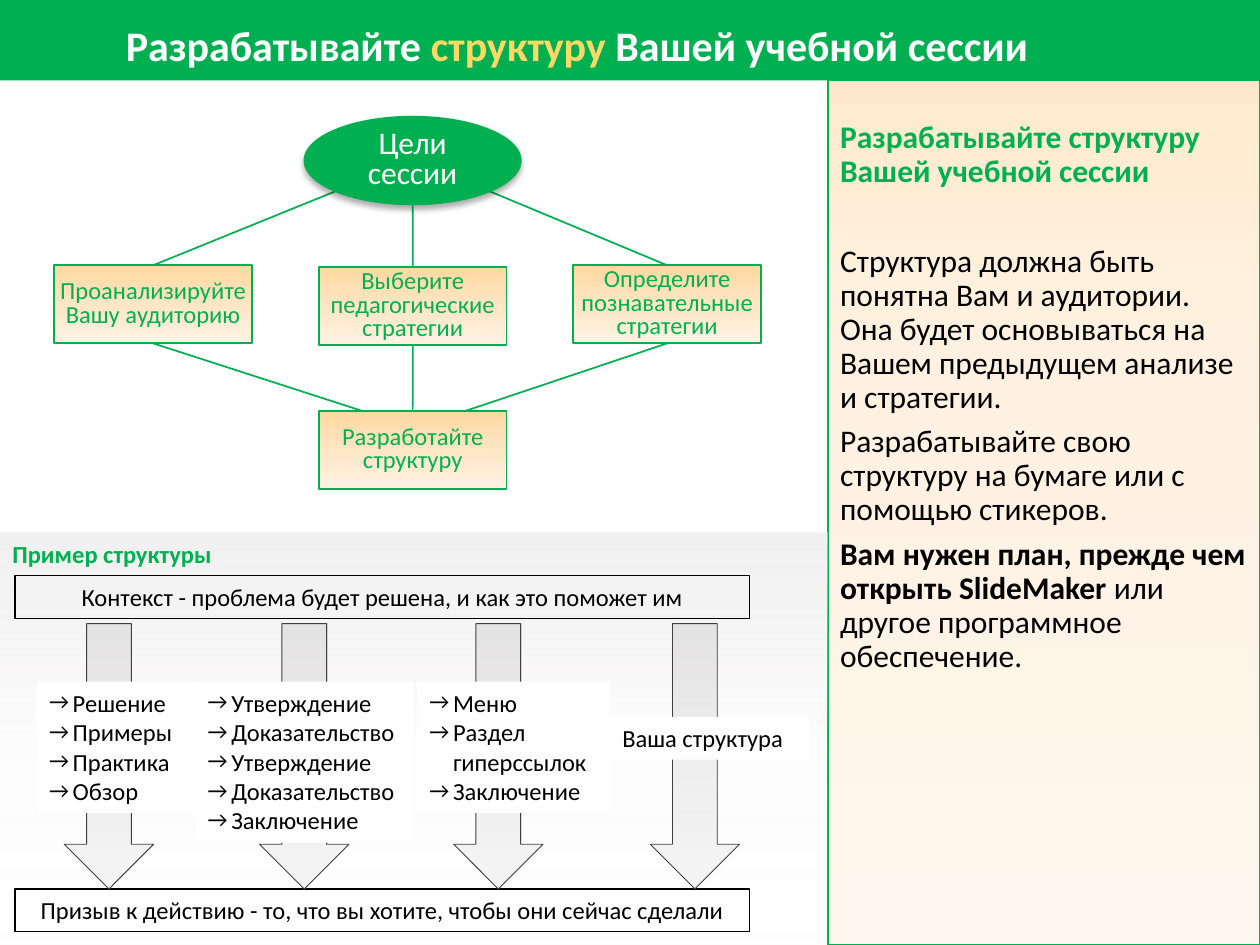
"""Build a slide on structuring a training session."""
from dataclasses import dataclass
from typing import Optional

from lxml import etree
from pptx import Presentation
from pptx.dml.color import RGBColor
from pptx.enum.shapes import MSO_CONNECTOR, MSO_SHAPE
from pptx.enum.text import MSO_ANCHOR, PP_ALIGN
from pptx.oxml.ns import qn
from pptx.util import Pt

RECT, OVAL, DOWN = MSO_SHAPE.RECTANGLE, MSO_SHAPE.OVAL, MSO_SHAPE.DOWN_ARROW
STRAIGHT = MSO_CONNECTOR.STRAIGHT
TOP, MIDDLE, BOTTOM = MSO_ANCHOR.TOP, MSO_ANCHOR.MIDDLE, MSO_ANCHOR.BOTTOM
LEFT, CENTER = PP_ALIGN.LEFT, PP_ALIGN.CENTER


@dataclass(frozen=True)
class Theme:
    """Colours, gradients and type sizes of the slide."""
    font: str = "Calibri"
    green: str = "00B050"
    gold: str = "FFD966"
    white: str = "FFFFFF"
    black: str = "000000"
    dark: str = "404040"
    title: float = 24
    body: float = 18
    small: float = 14
    peach: tuple = ((0, "FFD8A0", 100), (50, "FFE6C5", 100), (100, "FFF2E3", 100))
    sidebar: tuple = ((0, "FFD8A0", 55), (24, "FFE6C5", 55), (100, "FFF2E3", 55))
    panel: tuple = ((0, "E7E6E6", 60), (50, "E7E6E6", 10), (100, "E7E6E6", 2))
    arrow: tuple = ((0, "D0CECE", 46), (100, "D0CECE", 18))


T = Theme()


@dataclass(frozen=True)
class Box:
    """A rectangle in points."""
    x: float
    y: float
    w: float
    h: float


@dataclass(frozen=True)
class Run:
    """A stretch of text with one format."""
    text: str
    color: str = T.black
    size: float = T.small
    bold: bool = False


@dataclass(frozen=True)
class Para:
    """A paragraph of runs."""
    runs: tuple
    align: PP_ALIGN = LEFT
    spacing: Optional[float] = None
    before: float = 0
    bullet: bool = False


@dataclass(frozen=True)
class Step:
    """A green-framed box of the diagram."""
    box: Box
    text: str


@dataclass(frozen=True)
class Example:
    """A down arrow with a list laid over it."""
    arrow_x: float
    box: Box
    items: tuple
    bullet: bool = True


def add_gradient(s, stops: tuple) -> None:
    """Fill a shape from top to bottom with gradient stops."""
    s.fill.gradient()
    s.fill.gradient_angle = 270
    stop_list = s._element.spPr.find(".//" + qn("a:gsLst"))
    for old in list(stop_list):
        stop_list.remove(old)
    for pos, color, alpha in stops:
        gs = etree.SubElement(stop_list, qn("a:gs"), pos=str(pos * 1000))
        clr = etree.SubElement(gs, qn("a:srgbClr"), val=color)
        etree.SubElement(clr, qn("a:alpha"), val=str(alpha * 1000))


def add_shape(slide, kind, box: Box, fill=None, line: Optional[str] = None, width: float = 1):
    """Add a preset shape with a solid, gradient or empty fill."""
    s = slide.shapes.add_shape(kind, Pt(box.x), Pt(box.y), Pt(box.w), Pt(box.h))
    s.shadow.inherit = False
    if fill is None:
        s.fill.background()
    elif isinstance(fill, str):
        s.fill.solid()
        s.fill.fore_color.rgb = RGBColor.from_string(fill)
    else:
        add_gradient(s, fill)
    if line:
        s.line.color.rgb = RGBColor.from_string(line)
        s.line.width = Pt(width)
    else:
        s.line.fill.background()
    return s


def add_shadow(s) -> None:
    """Give a shape a soft shadow below it."""
    effects = s._element.spPr.find(qn("a:effectLst"))
    shadow = etree.SubElement(effects, qn("a:outerShdw"), blurRad=str(Pt(3.5)),
                              dist=str(Pt(2.2)), dir="5400000", rotWithShape="0")
    clr = etree.SubElement(shadow, qn("a:srgbClr"), val=T.black)
    etree.SubElement(clr, qn("a:alpha"), val="32000")


def add_bullet(p) -> None:
    """Hang a paragraph on an arrow bullet."""
    pPr = p._p.get_or_add_pPr()
    pPr.set("marL", str(Pt(13.5)))
    pPr.set("indent", str(-Pt(13.5)))
    etree.SubElement(pPr, qn("a:buSzPct"), val="90000")
    etree.SubElement(pPr, qn("a:buFont"), typeface=T.font)
    etree.SubElement(pPr, qn("a:buChar"), char="→")


def write(s, paras: list, anchor: MSO_ANCHOR = TOP, side: float = 7.2) -> None:
    """Write paragraphs into a shape run by run."""
    tf = s.text_frame
    tf.word_wrap = True
    tf.vertical_anchor = anchor
    tf.margin_left = tf.margin_right = Pt(side)
    for i, para in enumerate(paras):
        p = tf.add_paragraph() if i else tf.paragraphs[0]
        p.alignment = para.align
        p.space_before = Pt(para.before)
        if para.spacing:
            p.line_spacing = para.spacing
        if para.bullet:
            add_bullet(p)
        for run in para.runs:
            r = p.add_run()
            r.text = run.text
            r.font.name, r.font.size, r.font.bold = T.font, Pt(run.size), run.bold
            r.font.color.rgb = RGBColor.from_string(run.color)


def add_text(slide, box: Box, paras: list, anchor: MSO_ANCHOR = TOP) -> None:
    """Add a text box."""
    s = slide.shapes.add_textbox(Pt(box.x), Pt(box.y), Pt(box.w), Pt(box.h))
    write(s, paras, anchor)


def add_line(slide, x1: float, y1: float, x2: float, y2: float) -> None:
    """Add a green connector."""
    s = slide.shapes.add_connector(STRAIGHT, Pt(x1), Pt(y1), Pt(x2), Pt(y2))
    s.line.color.rgb = RGBColor.from_string(T.green)
    s.line.width = Pt(1)
    etree.SubElement(s._element.spPr, qn("a:effectLst"))


def add_frame(slide) -> None:
    """Draw the header, the sidebar and their text."""
    add_shape(slide, RECT, Box(473, 46, 247, 494), T.sidebar, T.green)
    add_shape(slide, RECT, Box(0, 0, 720, 46), T.green)
    add_shape(slide, RECT, Box(0, 304.6, 473, 235.4), T.panel)
    title = (("Разрабатывайте ", T.white), ("структуру ", T.gold),
             ("Вашей учебной сессии", T.white))
    runs = tuple(Run(text, color, T.title, True) for text, color in title)
    add_text(slide, Box(64.8, 0, 629, 44), [Para(runs, spacing=0.9)], BOTTOM)
    body = (
        (0, (("Разрабатывайте структуру Вашей учебной сессии", T.green, True),)),
        (32, (("Структура должна быть понятна Вам и аудитории. Она будет основываться "
               "на Вашем предыдущем анализе и стратегии.", T.black, False),)),
        (6, (("Разрабатывайте свою структуру на бумаге или с помощью стикеров.",
              T.black, False),)),
        (6, (("Вам нужен план, прежде чем открыть SlideMaker ", T.black, True),
             ("или другое программное обеспечение.", T.black, False))))
    add_text(slide, Box(473, 65.5, 247, 474.5), [
        Para(tuple(Run(text, color, T.body, bold) for text, color, bold in runs),
             spacing=0.9, before=before) for before, runs in body])


def add_diagram(slide) -> None:
    """Draw the goal, three steps and the result with connectors."""
    goal = Box(173.5, 66.2, 124.6, 51.1)
    result = Step(Box(182.2, 234.7, 107.3, 44.6), "Разработайте структуру")
    steps = (Step(Box(31, 151.6, 113, 44.6), "Проанализируйте Вашу аудиторию"),
             Step(Box(182.2, 152.6, 107.3, 44.6), "Выберите педагогические стратегии"),
             Step(Box(327.6, 151.6, 107.3, 44.6), "Определите познавательные стратегии"))
    joints = ((191.5, 109.4, 206.6), (235.8, 117.3, 235.8), (280, 109.4, 266.4))
    for step, (top_x, top_y, low_x) in zip(steps, joints):
        mid = step.box.x + step.box.w / 2
        add_line(slide, mid, step.box.y, top_x, top_y)
        add_line(slide, mid, step.box.y + step.box.h, low_x, result.box.y)
    for step in (*steps, result):
        s = add_shape(slide, RECT, step.box, T.peach, T.green)
        write(s, [Para((Run(step.text, T.green),), CENTER, 0.8)], MIDDLE, 0)
    s = add_shape(slide, OVAL, goal, T.green)
    add_shadow(s)
    write(s, [Para((Run("Цели сессии", T.white, T.body),), CENTER, 0.8)], MIDDLE, 0)


def add_examples(slide) -> None:
    """Draw the sample structures between context and call to action."""
    add_text(slide, Box(0, 304.6, 182, 24.5),
             [Para((Run("Пример структуры", T.green, bold=True),))])
    for y, text in ((329, "Контекст - проблема будет решена, и как это поможет им"),
                    (508, "Призыв к действию - то, что вы хотите, чтобы они сейчас сделали")):
        s = add_shape(slide, RECT, Box(8.6, y, 419.8, 24.5), None, T.black, 0.75)
        write(s, [Para((Run(text),), CENTER)])
    claim = ("Утверждение", "Доказательство")
    examples = (
        Example(36.7, Box(21, 389.5, 90.6, 75), ("Решение", "Примеры", "Практика", "Обзор")),
        Example(148.3, Box(111.6, 389.5, 124.6, 92), (*claim, *claim, "Заключение")),
        Example(259.2, Box(238.3, 389.5, 110.2, 75), ("Меню", "Раздел гиперссылок", "Заключение")),
        Example(371.5, Box(348.5, 409.7, 113.8, 24.5), ("Ваша структура",), False))
    for ex in examples:
        add_shape(slide, DOWN, Box(ex.arrow_x, 356.4, 51.1, 151.6), T.arrow, T.dark, 0.5)
        s = add_shape(slide, RECT, ex.box, T.white)
        write(s, [Para((Run(item),), bullet=ex.bullet) for item in ex.items])


def main() -> None:
    """Build and save the slide."""
    prs = Presentation()
    prs.slide_width, prs.slide_height = Pt(720), Pt(540)
    slide = prs.slides.add_slide(prs.slide_layouts[6])
    add_frame(slide)
    add_diagram(slide)
    add_examples(slide)
    prs.save("out.pptx")


if __name__ == "__main__":
    main()
